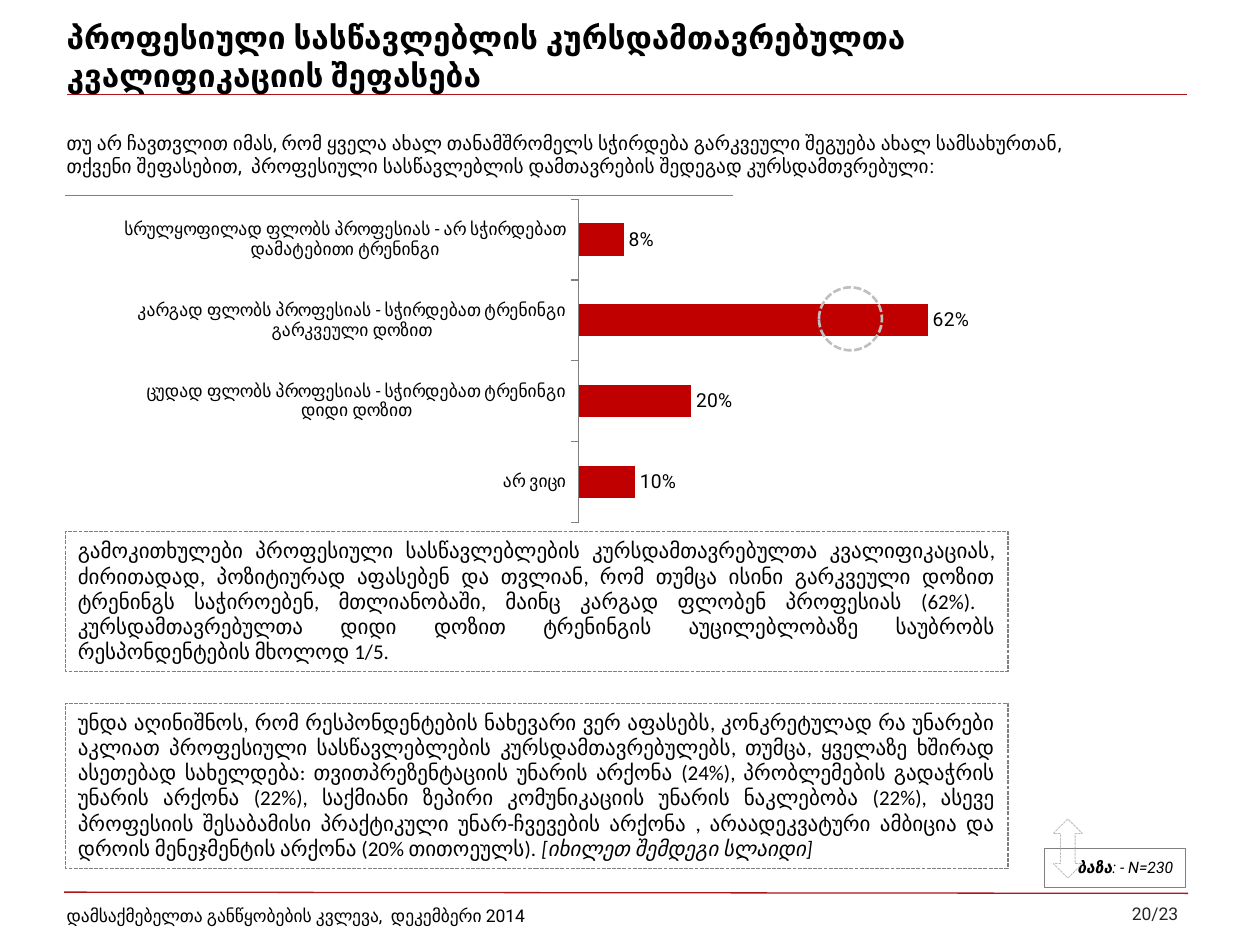
from dataclasses import dataclass
from typing import Any

from lxml import etree
from pptx import Presentation
from pptx import util as u
from pptx.chart.data import CategoryChartData
from pptx.dml.color import RGBColor
from pptx.enum import chart as charts, dml, shapes, text
from pptx.oxml import parse_xml
from pptx.oxml.ns import nsdecls, qn

RED, RULE, GREY, PALE, BLACK = "C00000", "AC161B", "808080", "BFBFBF", "000000"
LEFT, MIDDLE = text.PP_ALIGN.LEFT, text.MSO_ANCHOR.MIDDLE


def colour(code):
    return RGBColor.from_string(code)


@dataclass
class Painter:
    """Draws styled elements on the current slide, with lengths in points."""
    page: Any
    font: str = "Roboto"

    def fill_text(self, shape, spans, size, align=LEFT, anchor=MIDDLE, font=None,
                  ink=BLACK, bold=None, italic=None):
        frame = shape.text_frame
        frame.word_wrap = True
        frame.vertical_anchor = anchor
        para = frame.paragraphs[0]
        para.alignment = align
        style = para.font
        style.name, style.size = font or self.font, u.Pt(size)
        style.bold, style.italic = bold, italic
        style.color.rgb = colour(ink)
        for words, emphasis in spans:
            span = para.add_run()
            span.text = words
            if "bold" in emphasis:
                span.font.bold = True
            if "italic" in emphasis:
                span.font.italic = True

    def label(self, area, words, size, **style):
        box = self.page.shapes.add_textbox(*map(u.Pt, area))
        self.fill_text(box, [(words, ())], size, **style)

    def outline(self, kind, area, ink, width, dashed=True):
        shape = self.page.shapes.add_shape(kind, *map(u.Pt, area))
        shape.shadow.inherit = False
        shape.fill.background()
        shape.line.color.rgb = colour(ink)
        shape.line.width = u.Pt(width)
        if dashed:
            shape.line.dash_style = dml.MSO_LINE.SQUARE_DOT
        return shape

    def rule(self, start, end, ink):
        line = self.page.shapes.add_connector(
            shapes.MSO_CONNECTOR.STRAIGHT, *map(u.Pt, start + end))
        line.line.color.rgb = colour(ink)
        line.line.width = u.Pt(0.75)
        etree.SubElement(line._element.spPr, qn("a:effectLst"))

    def bars(self, area, rows, plot_area):
        data = CategoryChartData(number_format="0%")
        data.categories = [name for name, _ in rows]
        data.add_series("Series 1", [value for _, value in rows])
        chart = self.page.shapes.add_chart(
            charts.XL_CHART_TYPE.BAR_CLUSTERED, *map(u.Pt, area), data).chart
        chart.has_legend = chart.has_title = False
        chart.font.name, chart.font.size = self.font, u.Pt(10)
        chart.font.color.rgb = colour(BLACK)

        names, values = chart.category_axis, chart.value_axis
        names.reverse_order = True
        names.has_major_gridlines = values.has_major_gridlines = False
        names.major_tick_mark = charts.XL_TICK_MARK.OUTSIDE
        names.tick_labels.font.size = u.Pt(10)
        names.format.line.color.rgb = colour(GREY)
        values.visible = False
        values.minimum_scale, values.maximum_scale = 0, 0.7

        plot = chart.plots[0]
        plot.gap_width, plot.vary_by_categories = 150, False
        fill = plot.series[0].format.fill
        fill.solid()
        fill.fore_color.rgb = colour(RED)
        plot.has_data_labels = True
        labels = plot.data_labels
        labels.show_value = True
        labels.number_format, labels.number_format_is_linked = "0%", False
        labels.position = charts.XL_LABEL_POSITION.OUTSIDE_END
        labels.font.name, labels.font.size = self.font, u.Pt(11)
        labels.font.color.rgb = colour(BLACK)

        sizes = "".join(f'<c:{key} val="{value}"/>' for key, value in zip("xywh", plot_area))
        layout = parse_xml(
            f'<c:layout {nsdecls("c")}><c:manualLayout><c:layoutTarget val="inner"/>'
            f'<c:xMode val="edge"/><c:yMode val="edge"/>{sizes}</c:manualLayout></c:layout>')
        area_element = chart._chartSpace.chart.plotArea
        for old in area_element.findall(qn("c:layout")):
            area_element.remove(old)
        area_element.insert(0, layout)


ANSWERS = [
    ("სრულყოფილად ფლობს პროფესიას - არ სჭირდებათ დამატებითი ტრენინგი", 0.08),
    ("კარგად ფლობს პროფესიას - სჭირდებათ ტრენინგი გარკვეული დოზით", 0.62),
    ("ცუდად ფლობს პროფესიას - სჭირდებათ ტრენინგი დიდი დოზით", 0.2),
    ("არ ვიცი", 0.1),
]
FINDINGS = [
    (401.8, 94.3, [
        ("უნდა აღინიშნოს, რომ რესპონდენტების ნახევარი ვერ აფასებს, კონკრეტულად რა უნარები "
         "აკლიათ პროფესიული სასწავლებლების კურსდამთავრებულებს, თუმცა, ყველაზე ხშირად "
         "ასეთებად სახელდება: თვითპრეზენტაციის უნარის არქონა (24%), პრობლემების გადაჭრის "
         "უნარის არქონა (22%), საქმიანი ზეპირი კომუნიკაციის უნარის ნაკლებობა (22%), ასევე "
         "პროფესიის შესაბამისი პრაქტიკული უნარ-ჩვევების არქონა , არაადეკვატური ამბიცია და "
         "დროის მენეჯმენტის არქონა (20% თითოეულს). ", ()),
        ("[იხილეთ შემდეგი სლაიდი]", ("italic",))]),
    (303.8, 79.9, [
        ("გამოკითხულები პროფესიული სასწავლებლების კურსდამთავრებულთა კვალიფიკაციას, "
         "ძირითადად, პოზიტიურად აფასებენ და თვლიან, რომ თუმცა ისინი გარკვეული დოზით "
         "ტრენინგს საჭიროებენ, მთლიანობაში, მაინც კარგად ფლობენ პროფესიას (62%).  "
         "კურსდამთავრებულთა დიდი დოზით ტრენინგის აუცილებლობაზე საუბრობს "
         "რესპონდენტების მხოლოდ 1/5.", ())]),
]


def main():
    deck = Presentation()
    deck.slide_width, deck.slide_height = u.Pt(720), u.Pt(540)
    painter = Painter(deck.slides.add_slide(deck.slide_layouts[6]))

    painter.rule((36.7, 509.8), (679, 510.5), RULE)
    painter.rule((38.2, 54), (678.2, 54), RULE)
    painter.label((570.2, 506.9, 110.2, 30.2), "20/23", 10,
                  align=text.PP_ALIGN.RIGHT, ink="262626")
    painter.label((31, 509, 421.2, 28.8),
                  "დამსაქმებელთა განწყობების კვლევა,  დეკემბერი 2014", 10)

    painter.bars((69.8, 111.6, 499.7, 187.2), ANSWERS, (0.522, 0.012, 0.451, 0.988))
    painter.label((31, 71.3, 612, 33.8),
                  "თუ არ ჩავთვლით იმას, რომ ყველა ახალ თანამშრომელს სჭირდება გარკვეული "
                  "შეგუება ახალ სამსახურთან, თქვენი შეფასებით,  პროფესიული სასწავლებლის "
                  "დამთავრების შედეგად კურსდამთვრებული:", 11, anchor=text.MSO_ANCHOR.TOP)
    painter.label((31, 20.9, 570.2, 22.3),
                  "პროფესიული სასწავლებლის კურსდამთავრებულთა კვალიფიკაციის შეფასება",
                  18, bold=True)
    painter.rule((37.4, 111.6), (419, 111.6), GREY)

    kinds = shapes.MSO_SHAPE
    base = painter.outline(kinds.RECTANGLE, (596.9, 484.6, 80.6, 22.3), GREY, 0.5, dashed=False)
    painter.fill_text(base, [("ბაზა", ("bold",)), (": - N=230", ())], 9,
                      align=text.PP_ALIGN.RIGHT, italic=True)
    painter.outline(kinds.UP_DOWN_ARROW, (601.9, 468, 16.6, 33.8), PALE, 0.5)
    painter.outline(kinds.OVAL, (468, 164.2, 36, 36), PALE, 1.5)
    for top, height, spans in FINDINGS:
        box = painter.outline(kinds.RECTANGLE, (37.4, top, 538.6, height), GREY, 0.75)
        painter.fill_text(box, spans, 12, align=text.PP_ALIGN.JUSTIFY,
                          anchor=text.MSO_ANCHOR.TOP, font="Calibri")

    deck.save("out.pptx")


if __name__ == "__main__":
    main()
